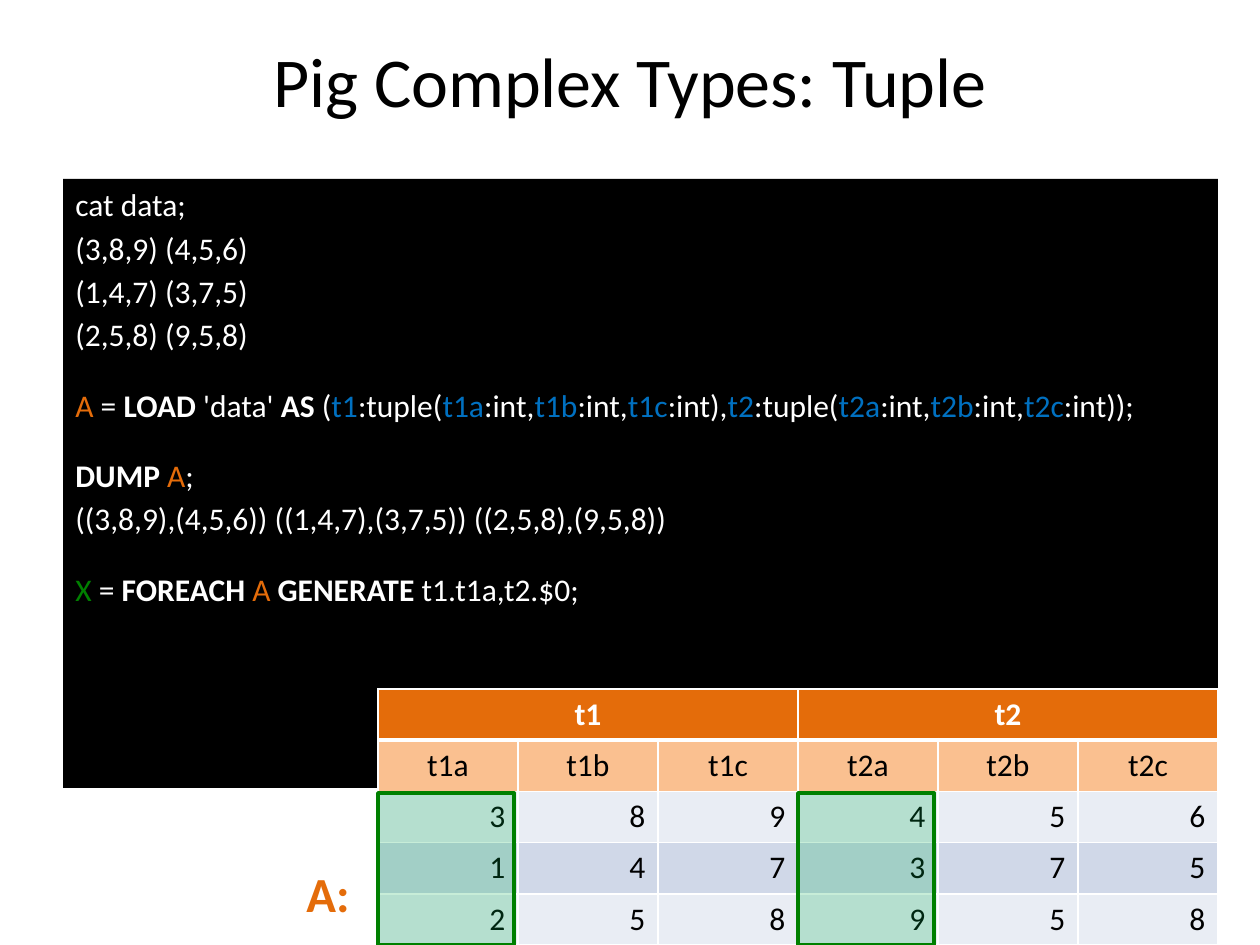
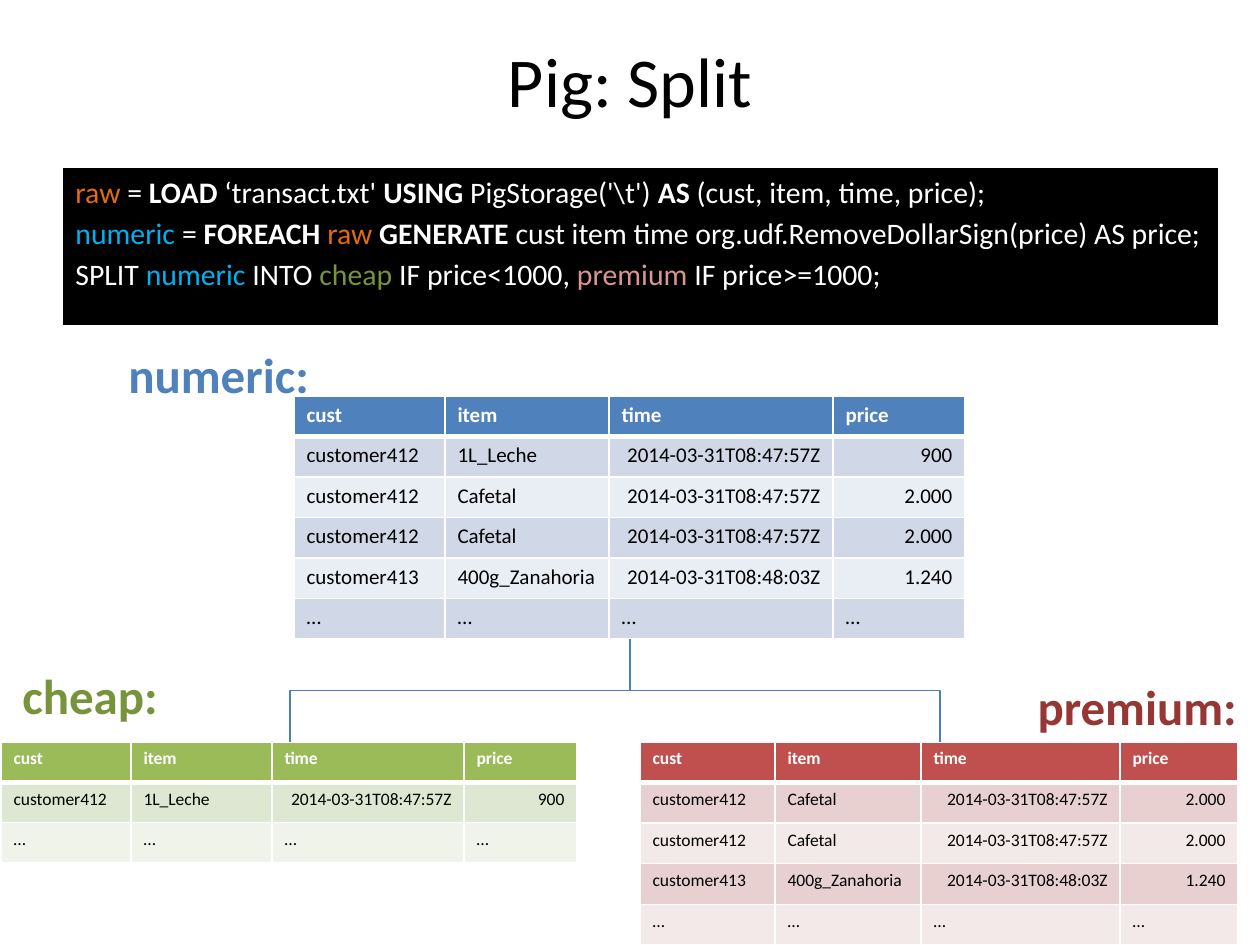
from lxml.etree import SubElement
from pptx import Presentation
from pptx.dml.color import RGBColor
from pptx.enum.shapes import MSO_CONNECTOR as Connector, MSO_SHAPE as Shape
from pptx.enum.text import MSO_ANCHOR as Anchor, PP_ALIGN as Align
from pptx.oxml.ns import qn
from pptx.util import Emu, Pt

COLOURS = {
    "black": "000000", "white": "FFFFFF", "orange": "E46C0A", "peach": "FAC090",
    "field": "0070C0", "green": "008000", "marker": "00B050", "sky": "00B0F0",
    "olive": "77933C", "rose": "D99694", "wine": "953735", "connector": "4B7EBC",
    "blue": "4F81BD", "blue mid": "D0D8E8", "blue pale": "E9EDF4",
    "lime": "9BBB59", "lime mid": "DEE7D1", "lime pale": "EFF3EA",
    "red": "C0504D", "red mid": "E8D0D0", "red pale": "F4E9E9",
}
FONT = "Calibri"
PX_PER_INCH = 126


def px(length):
    return Emu(round(length * 914400 / PX_PER_INCH))


def style(font, size, colour, bold=False):
    font.name, font.size, font.bold = FONT, Pt(size), bold
    font.color.rgb = RGBColor.from_string(COLOURS[colour])


# Code lines: plain strings are white, pairs give a text and its style.
# A line starting with None has a wider gap above it.
tuple_code = [
    ["cat data;"],
    ["(3,8,9) (4,5,6)"],
    ["(1,4,7) (3,7,5)"],
    ["(2,5,8) (9,5,8)"],
    [None, ("A", "orange"), " = ", ("LOAD", "bold"), " 'data' ", ("AS", "bold"), " (",
     ("t1", "field"), ":tuple(", ("t1a", "field"), ":int,", ("t1b", "field"), ":int,",
     ("t1c", "field"), ":int),", ("t2", "field"), ":tuple(", ("t2a", "field"), ":int,",
     ("t2b", "field"), ":int,", ("t2c", "field"), ":int));"],
    [None, ("DUMP ", "bold"), ("A", "orange"), ";"],
    ["((3,8,9),(4,5,6)) ((1,4,7),(3,7,5)) ((2,5,8),(9,5,8))"],
    [None, ("X ", "green"), "= ", ("FOREACH ", "bold"), ("A ", "orange"),
     ("GENERATE", "bold"), " t1.t1a,t2.$0;"],
]
split_code = [
    [("raw ", "orange"), "= ", ("LOAD", "bold"), " ‘transact.txt' ", ("USING ", "bold"),
     "PigStorage('\\t') ", ("AS", "bold"), " (cust, item, time, price);"],
    [("numeric ", "sky"), "= ", ("FOREACH ", "bold"), ("raw ", "orange"),
     ("GENERATE ", "bold"), "cust item time org.udf.RemoveDollarSign(price) AS price;"],
    ["SPLIT ", ("numeric ", "sky"), "INTO ", ("cheap ", "olive"), "IF price<1000, ",
     ("premium", "rose"), " IF price>=1000;"],
]

# Table rows
header = ["cust", "item", "time", "price"]
milk = ["customer412", "1L_Leche", "2014-03-31T08:47:57Z", "900"]
coffee = ["customer412", "Cafetal", "2014-03-31T08:47:57Z", "2.000"]
carrot = ["customer413", "400g_Zanahoria", "2014-03-31T08:48:03Z", "1.240"]
more = ["…"] * 4
tuple_rows = [
    ["t1", "", "", "t2", "", ""],
    ["t1a", "t1b", "t1c", "t2a", "t2b", "t2c"],
    ["3", "8", "9", "4", "5", "6"],
    ["1", "4", "7", "3", "7", "5"],
    ["2", "5", "8", "9", "5", "8"],
]

# Tables: left, top, height, column widths, size, head fills, band fills,
# head alignment, first right-aligned column, rows
# Labels: text, colour, left, top, alignment
pages = [
    {"title": "Pig Complex Types: Tuple", "code": tuple_code, "code top": 179,
     "code height": 609, "code size": 18, "gap": 3.2,
     "tables": [(378, 689, 256, [140] * 6, 18, ["orange", "peach"],
                 ["blue pale", "blue mid"], Align.CENTER, 0, tuple_rows)],
     "labels": [("A:", "orange", 294, 857, Align.LEFT)]},
    {"title": "Pig: Split", "code": split_code, "code top": 168,
     "code height": 157, "code size": 17, "gap": 3,
     "tables": [
         (294, 396, 243, [151, 164, 224, 132], 12, ["blue"], ["blue mid", "blue pale"],
          Align.LEFT, 2, [header, milk, coffee, coffee, carrot, more]),
         (1, 742, 121, [130, 141, 192, 113], 10, ["lime"], ["lime mid", "lime pale"],
          Align.LEFT, 2, [header, milk, more]),
         (640, 742, 203, [135, 146, 199, 118], 10, ["red"], ["red mid", "red pale"],
          Align.LEFT, 2, [header, coffee, coffee, carrot, more])],
     "labels": [("numeric:", "blue", 116, 338, Align.LEFT),
                ("cheap:", "olive", 10, 659, Align.LEFT),
                ("premium:", "wine", 850, 670, Align.RIGHT)]},
]

deck = Presentation()
deck.slide_width, deck.slide_height = px(1260), px(945)
title_only = deck.slide_layouts[5]

for content in pages:
    page = deck.slides.add_slide(title_only)

    # Title
    title = page.shapes.title
    title.left, title.top, title.width, title.height = px(63), px(0), px(1134), px(158)
    title.text_frame.text = content["title"]
    title.text_frame.vertical_anchor = Anchor.MIDDLE
    para = title.text_frame.paragraphs[0]
    para.alignment = Align.CENTER
    style(para.font, 40, "black")

    # Code panel
    panel = page.shapes.add_shape(Shape.RECTANGLE, px(63), px(content["code top"]),
                                  px(1155), px(content["code height"]))
    panel.shadow.inherit = False
    panel.fill.solid()
    panel.fill.fore_color.rgb = RGBColor.from_string(COLOURS["black"])
    panel.line.fill.background()
    frame = panel.text_frame
    frame.word_wrap, frame.vertical_anchor = True, Anchor.TOP
    for number, line in enumerate(content["code"]):
        para = frame.add_paragraph() if number else frame.paragraphs[0]
        para.alignment = Align.LEFT
        para.space_before = Pt(content["gap"] + (15.4 if line[0] is None else 0))
        for part in filter(None, line):
            text, look = (part, "white") if isinstance(part, str) else part
            span = para.add_run()
            span.text = text
            bold = look == "bold"
            style(span.font, content["code size"], "white" if bold else look, bold)

    # Tables
    for left, top, height, widths, size, heads, bands, head_align, first_right, rows in content["tables"]:
        table = page.shapes.add_table(len(rows), len(widths), px(left), px(top),
                                      px(sum(widths)), px(height)).table
        for column, width in zip(table.columns, widths):
            column.width = px(width)
        for r, row in enumerate(rows):
            is_head = r < len(heads)
            fill = heads[r] if is_head else bands[(r - len(heads)) % 2]
            for c, text in enumerate(row):
                cell = table.cell(r, c)
                cell.text = text
                cell.fill.solid()
                cell.fill.fore_color.rgb = RGBColor.from_string(COLOURS[fill])
                para = cell.text_frame.paragraphs[0]
                if is_head:
                    para.alignment = head_align
                else:
                    is_right = c >= first_right and text != "…"
                    para.alignment = Align.RIGHT if is_right else Align.LEFT
                style(para.font, size, "black" if r else "white", r == 0)

                # White borders, thick under the top row
                properties = cell._tc.get_or_add_tcPr()
                for place, side in enumerate(("L", "R", "T", "B")):
                    thick = (r, side) in ((0, "B"), (1, "T"))
                    border = SubElement(properties, qn("a:ln" + side),
                                        w=str(Pt(3 if thick else 1)))
                    paint = SubElement(border, qn("a:solidFill"))
                    SubElement(paint, qn("a:srgbClr"), val=COLOURS["white"])
                    properties.insert(place, border)
        if rows is tuple_rows:
            for first in (0, 3):
                table.cell(0, first).merge(table.cell(0, first + 2))

    # Relation labels
    for text, colour, left, top, alignment in content["labels"]:
        box = page.shapes.add_textbox(px(left), px(top), px(399), px(72))
        box.text_frame.word_wrap = True
        box.text_frame.text = text
        para = box.text_frame.paragraphs[0]
        para.alignment = alignment
        style(para.font, 28, colour, True)

# Markers over the generated columns t1a and t2a
tuple_page, split_page = deck.slides
for left in (378, 798):
    marker = tuple_page.shapes.add_shape(Shape.RECTANGLE, px(left), px(793), px(136), px(152))
    marker.shadow.inherit = False
    marker.fill.solid()
    marker.fill.fore_color.rgb = RGBColor.from_string(COLOURS["marker"])
    tint = marker._element.spPr.find(".//" + qn("a:srgbClr"))
    SubElement(tint, qn("a:alpha"), val="22000")
    marker.line.color.rgb = RGBColor.from_string(COLOURS["green"])
    marker.line.width = Pt(2)

# Elbows from the numeric table down to its two parts, drawn sideways and turned
start_x, start_y, end_y = 630, 639, 742
for end_x, turn in ((290, 90), (940, 270)):
    middle_x, middle_y = (start_x + end_x) / 2, (start_y + end_y) / 2
    half_width = (end_y - start_y) / 2 * (1 if turn == 90 else -1)
    half_height = abs(end_x - start_x) / 2
    elbow = split_page.shapes.add_connector(
        Connector.ELBOW, px(middle_x - half_width), px(middle_y - half_height),
        px(middle_x + half_width), px(middle_y + half_height))
    elbow.line.color.rgb = RGBColor.from_string(COLOURS["connector"])
    elbow.line.width = Pt(0.75)
    properties = elbow._element.spPr
    properties.find(qn("a:xfrm")).set("rot", str(turn * 60000))
    SubElement(properties, qn("a:effectLst"))

deck.save("out.pptx")
